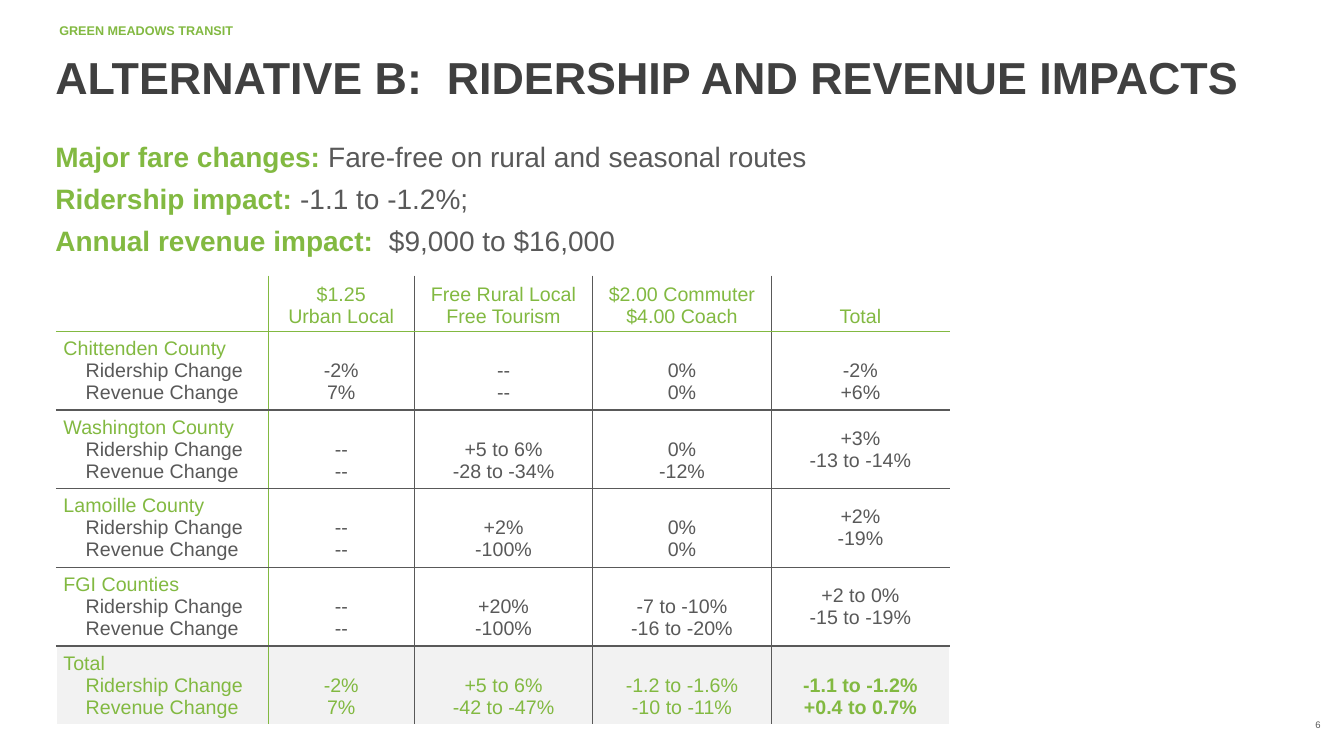
from lxml import etree
from pptx import Presentation
from pptx.dml.color import RGBColor
from pptx.enum import text as t
from pptx.oxml.ns import qn
from pptx.util import Inches, Pt

# Content
GREEN, GREY, DARK, PALE, WHITE = "82B941", "595959", "404040", "F2F2F2", "FFFFFF"
BRAND = "GREEN MEADOWS TRANSIT"
TITLE = "ALTERNATIVE B:  RIDERSHIP AND REVENUE IMPACTS"
FACTS = [
    ("Major fare changes:", " Fare-free on rural and seasonal routes"),
    ("Ridership impact:", " -1.1 to -1.2%;"),
    ("Annual revenue impact:", "  $9,000 to $16,000"),
]
HEADS = [(), ("$1.25", "Urban Local"), ("Free Rural Local", "Free Tourism"),
         ("$2.00 Commuter", "$4.00 Coach"), ("Total",)]
LABELS = ("Ridership Change", "Revenue Change")
AREAS = [
    ("Chittenden County", ("-2%", "7%"), ("--", "--"), ("0%", "0%"), ("-2%", "+6%")),
    ("Washington County", ("--", "--"), ("+5 to 6%", "-28 to -34%"), ("0%", "-12%"),
     ("+3%", "-13 to -14%")),
    ("Lamoille County", ("--", "--"), ("+2%", "-100%"), ("0%", "0%"), ("+2%", "-19%")),
    ("FGI Counties", ("--", "--"), ("+20%", "-100%"), ("-7 to -10%", "-16 to -20%"),
     ("+2 to 0%", "-15 to -19%")),
    ("Total", ("-2%", "7%"), ("+5 to 6%", "-42 to -47%"), ("-1.2 to -1.6%", "-10 to -11%"),
     ("-1.1 to -1.2%", "+0.4 to 0.7%")),
]
CENTRED = (2, 3, 4)  # rows whose last cell sits mid-height
WIDTHS = [2.1, 1.45, 1.77, 1.77, 1.77]
HEAD_H, ROW_H, GRID_H, LINE_H = 0.42, 0.6, 4.42, 0.22  # rows grow to fit their text
LAST_R, LAST_C = len(AREAS), len(WIDTHS) - 1
ACROSS = [WHITE, GREEN] + [GREY] * (LAST_R - 1) + [WHITE]
DOWN = [WHITE, GREEN] + [GREY] * (LAST_C - 1) + [WHITE]


# Helpers
def rgb(code):
    return RGBColor.from_string(code)


def add_run(para, words, size, color, bold=False):
    run = para.add_run()
    run.text = words
    for key, val in {"name": "Arial", "size": Pt(size), "bold": bold}.items():
        setattr(run.font, key, val)
    run.font.color.rgb = rgb(color)


def add_box(at, paras, size, align=None, after=0, **form):
    frame = slide.shapes.add_textbox(*map(Inches, at)).text_frame
    frame.word_wrap = True
    for key, val in form.items():
        setattr(frame, key, val)
    for i, runs in enumerate(paras):
        para = frame.add_paragraph() if i else frame.paragraphs[0]
        para.alignment = align
        para.space_after = Pt(after)
        for words, color, bold in runs:
            add_run(para, words, size, color, bold)


def set_edges(cell, edges):
    props = cell._tc.get_or_add_tcPr()
    for i, (side, color) in enumerate(edges.items()):
        line = etree.Element(qn("a:ln" + side), w=str(Pt(1)))
        fill = etree.SubElement(line, qn("a:solidFill"))
        etree.SubElement(fill, qn("a:srgbClr"), val=color)
        props.insert(i, line)


def fill_cell(r, c, lines, color):
    cell = grid.cell(r, c)
    drop = LINE_H if r and c and not (c == LAST_C and r in CENTRED) else 0
    form = {
        "margin_left": Inches(0.07), "margin_right": Inches(0.07),
        "margin_top": Inches(0.04 + drop), "margin_bottom": Inches(0.04),
        "vertical_anchor": t.MSO_ANCHOR.MIDDLE if r else t.MSO_ANCHOR.BOTTOM,
    }
    for key, val in form.items():
        setattr(cell, key, val)
    for i, words in enumerate(lines):
        para = cell.text_frame.add_paragraph() if i else cell.text_frame.paragraphs[0]
        para.alignment = t.PP_ALIGN.CENTER if c else t.PP_ALIGN.LEFT
        label = c == 0 and i > 0
        if label:
            para._p.get_or_add_pPr().set("marL", str(Inches(0.22)))
        tint = GREEN if c == 0 and not label else color
        add_run(para, words, 14, tint, r == LAST_R and c == LAST_C)
    if r == LAST_R:
        cell.fill.solid()
        cell.fill.fore_color.rgb = rgb(PALE)
    else:
        cell.fill.background()
    set_edges(cell, {"L": DOWN[c], "R": DOWN[c + 1], "T": ACROSS[r], "B": ACROSS[r + 1]})


# Slide
deck = Presentation()
deck.slide_width, deck.slide_height = Inches(13.33), Inches(7.5)
slide = deck.slides.add_slide(deck.slide_layouts[6])

# Headings and key facts
add_box((0.49, 0.18, 9.46, 0.25), [[(BRAND, GREEN, True)]], 9)
add_box((0.45, 0.36, 12.21, 0.8), [[(TITLE, DARK, True)]], 32,
        vertical_anchor=t.MSO_ANCHOR.MIDDLE)
add_box((0.45, 1.33, 12.21, 1.35),
        [[(name, GREEN, True), (fact, GREY, False)] for name, fact in FACTS], 20, after=6)

# Impact table
heights = [HEAD_H] + [ROW_H] * LAST_R
holder = slide.shapes.add_table(
    LAST_R + 1, LAST_C + 1, Inches(0.56), Inches(2.74),
    Inches(sum(WIDTHS)), Inches(GRID_H))
grid = holder.table
grid.first_row = grid.horz_banding = False
for col, width in zip(grid.columns, WIDTHS):
    col.width = Inches(width)
for row, height in zip(grid.rows, heights):
    row.height = Inches(height)
holder.height = Inches(GRID_H)
for c, lines in enumerate(HEADS):
    fill_cell(0, c, lines, GREEN)
for r, (area, *pairs) in enumerate(AREAS, 1):
    for c, lines in enumerate([(area, *LABELS), *pairs]):
        fill_cell(r, c, lines, GREEN if r == LAST_R else GREY)

# Page number
add_box((12.24, 7.05, 0.86, 0.27), [[("6", GREY, False)]], 6.8, align=t.PP_ALIGN.RIGHT,
        vertical_anchor=t.MSO_ANCHOR.MIDDLE, margin_left=0, margin_right=0,
        margin_top=0, margin_bottom=0)

deck.save("out.pptx")
